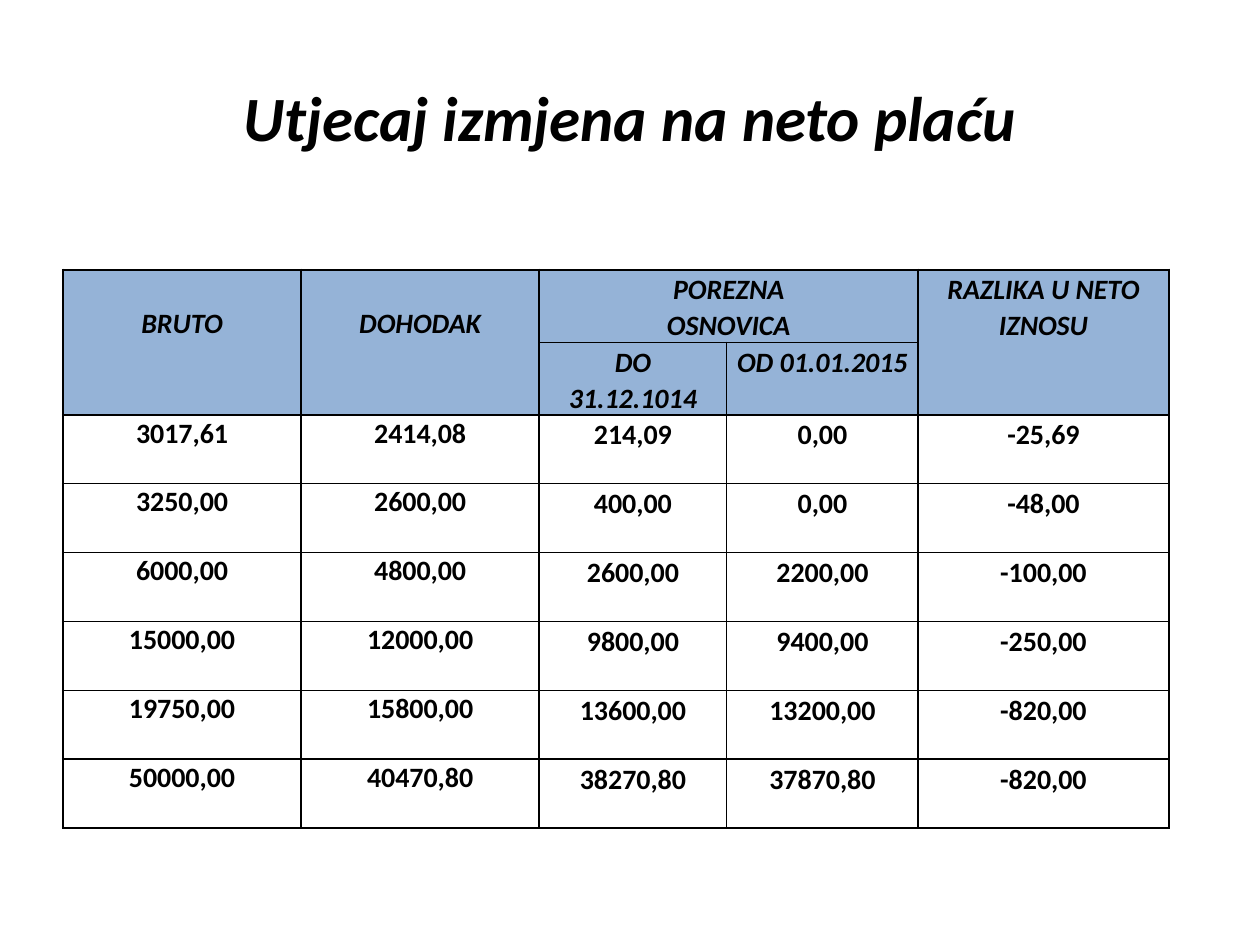
from lxml.etree import SubElement
from pptx import Presentation
from pptx.dml.color import RGBColor
from pptx.enum.text import MSO_ANCHOR, PP_ALIGN
from pptx.oxml.ns import qn
from pptx.util import Cm, Pt

FONT = "Calibri"
BLACK, WHITE, HEADER_BLUE = "000000", "FFFFFF", "95B3D7"
THIN, THICK = 1, 1.5

COLUMN_WIDTHS = [4.8, 4.8, 3.78, 3.86, 5.05]
HEADER_HEIGHT, DATA_HEIGHT = 1.46, 1.39
HEADER_ROWS = 2
LINE_HEIGHT = 0.72
SIDE_MARGINS = [0, 0, 0.18, 0.18, 0.03]
TOP_MARGINS = [0, 0, 0.03, 0.03, 0.03]

# (row, column, last row, last column, lines, extra top margin)
HEADERS = [
    (0, 0, 1, 0, ["BRUTO"], LINE_HEIGHT),
    (0, 1, 1, 1, ["DOHODAK"], LINE_HEIGHT),
    (0, 2, 0, 3, ["POREZNA", "OSNOVICA"], 0),
    (0, 4, 1, 4, ["RAZLIKA U NETO IZNOSU"], 0),
    (1, 2, 1, 2, ["DO 31.12.1014"], 0),
    (1, 3, 1, 3, ["OD 01.01.2015"], 0),
]
SALARIES = [
    ["3017,61", "2414,08", "214,09", "0,00", "-25,69"],
    ["3250,00", "2600,00", "400,00", "0,00", "-48,00"],
    ["6000,00", "4800,00", "2600,00", "2200,00", "-100,00"],
    ["15000,00", "12000,00", "9800,00", "9400,00", "-250,00"],
    ["19750,00", "15800,00", "13600,00", "13200,00", "-820,00"],
    ["50000,00", "40470,80", "38270,80", "37870,80", "-820,00"],
]


def color(value):
    return RGBColor.from_string(value)


def write_lines(frame, lines, size, italic, spacing=None):
    for index, line in enumerate(lines):
        paragraph = frame.add_paragraph() if index else frame.paragraphs[0]
        paragraph.alignment = PP_ALIGN.CENTER
        paragraph.line_spacing = spacing
        run = paragraph.add_run()
        run.text = line
        run.font.name = FONT
        run.font.size = Pt(size)
        run.font.bold = True
        run.font.italic = italic
        run.font.color.rgb = color(BLACK)


def add_border(cell, side, points):
    line = SubElement(cell._tc.get_or_add_tcPr(), qn(f"a:ln{side}"), w=str(Pt(points)))
    fill = SubElement(line, qn("a:solidFill"))
    SubElement(fill, qn("a:srgbClr"), val=BLACK)


def style_cell(cell, row, column, row_count):
    """Set borders, fill and margins: thick lines frame the table and close the header."""
    thick_rules = (0, HEADER_ROWS, row_count)
    thick_sides = {
        "L": column == 0,
        "R": column == len(COLUMN_WIDTHS) - 1,
        "T": row in thick_rules,
        "B": row + 1 in thick_rules,
    }
    for side, thick in thick_sides.items():
        add_border(cell, side, THICK if thick else THIN)
    cell.fill.solid()
    cell.fill.fore_color.rgb = color(HEADER_BLUE if row < HEADER_ROWS else WHITE)
    cell.margin_left = cell.margin_right = Cm(SIDE_MARGINS[column])
    cell.margin_top = Cm(TOP_MARGINS[column])
    cell.margin_bottom = 0


def add_title(slide, left, top, width, height):
    title = slide.shapes.add_textbox(Cm(left), Cm(top), Cm(width), Cm(height))
    frame = title.text_frame
    frame.word_wrap = True
    frame.vertical_anchor = MSO_ANCHOR.MIDDLE
    write_lines(frame, ["Utjecaj izmjena na neto plaću"], 36, True)


def add_salary_table(slide, left, top):
    row_heights = [HEADER_HEIGHT] * HEADER_ROWS + [DATA_HEIGHT] * len(SALARIES)
    row_count = len(row_heights)
    table = slide.shapes.add_table(
        row_count, len(COLUMN_WIDTHS), Cm(left), Cm(top),
        Cm(sum(COLUMN_WIDTHS)), Cm(sum(row_heights)),
    ).table
    table.first_row = table.horz_banding = False
    for column, width in zip(table.columns, COLUMN_WIDTHS):
        column.width = Cm(width)
    for row, height in zip(table.rows, row_heights):
        row.height = Cm(height)

    for row in range(row_count):
        for column in range(len(COLUMN_WIDTHS)):
            style_cell(table.cell(row, column), row, column, row_count)

    for row, column, last_row, last_column, lines, extra_top in HEADERS:
        header = table.cell(row, column)
        if (row, column) != (last_row, last_column):
            header.merge(table.cell(last_row, last_column))
        header.margin_top = Cm(TOP_MARGINS[column] + extra_top)
        write_lines(header.text_frame, lines, 16, True, 1.05)

    for row, amounts in enumerate(SALARIES, HEADER_ROWS):
        for column, amount in enumerate(amounts):
            write_lines(table.cell(row, column).text_frame, [amount], 16, False, 1.05)


def main():
    presentation = Presentation()
    presentation.slide_width, presentation.slide_height = Cm(25.4), Cm(19.05)
    slide = presentation.slides.add_slide(presentation.slide_layouts[6])
    add_title(slide, 1.27, 0.76, 22.86, 3.18)
    add_salary_table(slide, 1.27, 5.44)
    presentation.save("out.pptx")


if __name__ == "__main__":
    main()
